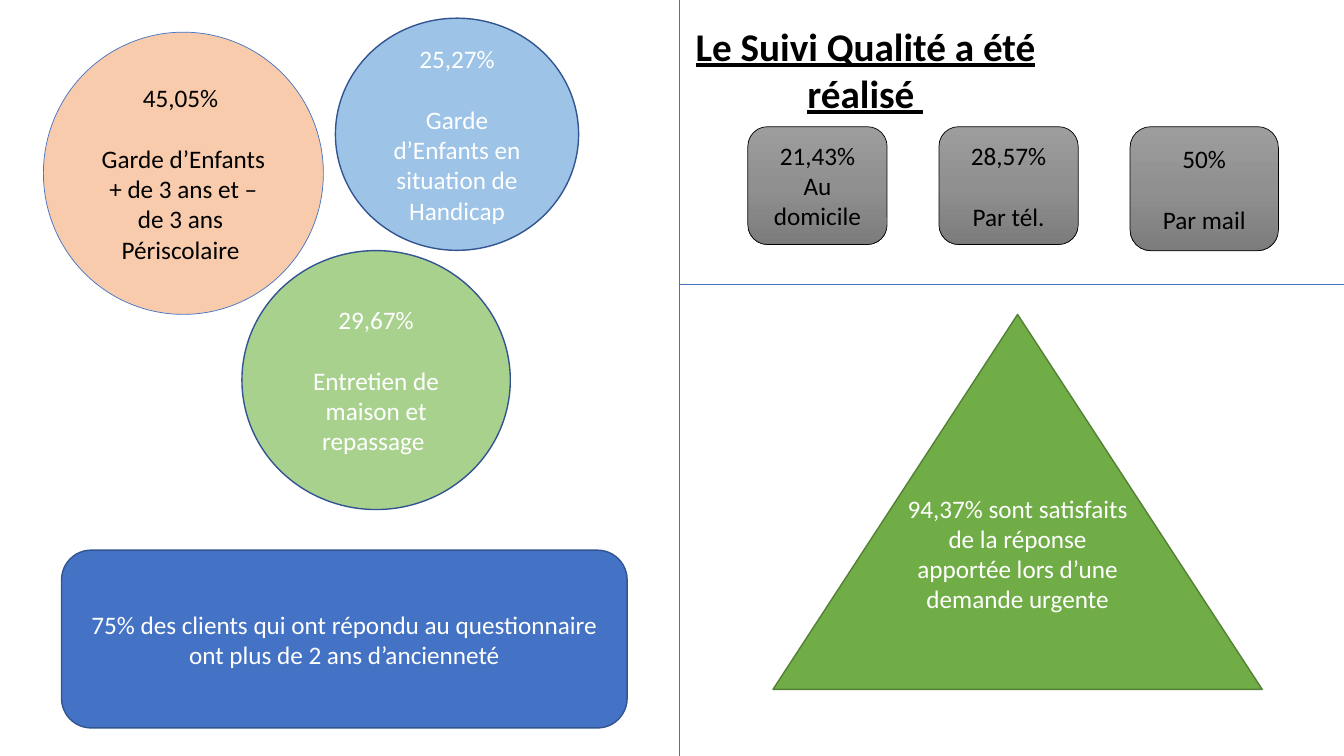
from copy import deepcopy
from dataclasses import dataclass

from lxml import etree
from pptx import Presentation
from pptx.dml.color import RGBColor
from pptx.enum import shapes, text
from pptx.oxml import ns
from pptx.util import Pt


@dataclass(frozen=True)
class Theme:
    font: str = "Calibri"
    body: int = 18
    title: int = 28
    line_gap: float = 22
    thin: float = 0.5
    medium: float = 1
    black: str = "000000"
    white: str = "FFFFFF"
    blue: str = "4472C4"
    navy: str = "325491"
    peach: str = "F8CBAD"
    sky: str = "9DC3E6"
    mint: str = "A9D18E"
    green: str = "70AD47"
    dark_green: str = "538035"
    greys: tuple = ((0, "9D9D9D"), (0.5, "909090"), (1, "7C7C7C"))


T = Theme()
SHAPE = shapes.MSO_SHAPE
WIDTH, HEIGHT = 960, 540
DIVIDER_X, DIVIDER_Y = 485.4, 203.1


def rgb(color):
    return RGBColor.from_string(color)


def write(tf, lines, color, size=T.body, heading=False):
    """Centre the lines; a None entry leaves a one-line gap by spacing."""
    tf.word_wrap = True
    p = None
    for line in lines:
        if line is None:
            p.space_after = Pt(T.line_gap)
            continue
        p = tf.add_paragraph() if p is not None else tf.paragraphs[0]
        p.text = line
        p.alignment = text.PP_ALIGN.CENTER
        for r in p.runs:
            r.font.name = T.font
            r.font.size = Pt(size)
            r.font.bold = r.font.underline = heading
            r.font.color.rgb = rgb(color)


def fill_gradient(s, stops):
    """Fill from top to bottom with any number of stops."""
    s.fill.gradient()
    s.fill.gradient_angle = 270
    gs_list = s._element.spPr.find(".//" + ns.qn("a:gsLst"))
    for _ in stops[2:]:
        gs_list.append(deepcopy(gs_list[0]))
    for stop, (position, color) in zip(s.fill.gradient_stops, stops):
        stop.position = position
        stop.color.rgb = rgb(color)


def add_figure(sp, kind, box, fill, line, lines, color=T.white, weight=T.medium):
    s = sp.add_shape(kind, *map(Pt, box))
    s.shadow.inherit = False
    if isinstance(fill, str):
        s.fill.solid()
        s.fill.fore_color.rgb = rgb(fill)
    else:
        fill_gradient(s, fill)
    s.line.color.rgb = rgb(line)
    s.line.width = Pt(weight)
    s.text_frame.vertical_anchor = text.MSO_ANCHOR.MIDDLE
    write(s.text_frame, lines, color)
    return s


def add_divider(sp, x1, y1, x2, y2):
    c = sp.add_connector(shapes.MSO_CONNECTOR.STRAIGHT, *map(Pt, (x1, y1, x2, y2)))
    c.line.color.rgb = rgb(T.blue)
    c.line.width = Pt(T.thin)
    etree.SubElement(c._element.spPr, ns.qn("a:effectLst"))


def add_title(sp, box, title):
    tf = sp.add_textbox(*map(Pt, box)).text_frame
    write(tf, [title], T.black, T.title, heading=True)


def add_services(sp):
    add_figure(sp, SHAPE.OVAL, (31, 23, 200, 201.6), T.peach, T.blue,
               ["45,05% ", None, "Garde d’Enfants + de 3 ans et – de 3 ans ",
                "Périscolaire "], T.black, T.thin)
    add_figure(sp, SHAPE.OVAL, (239.6, 13, 173.7, 165.8), T.sky, T.navy,
               ["25,27%", None, "Garde d’Enfants en situation de Handicap"])
    add_figure(sp, SHAPE.OVAL, (172.8, 179, 191.7, 185), T.mint, T.navy,
               ["29,67%", None, "Entretien de maison et repassage "])


def add_channels(sp):
    channels = [
        (99.5, 84.2, ["21,43% Au domicile"]),
        (99.5, 84.2, ["28,57%", None, "Par tél."]),
        (106, 88.6, ["50%", None, "Par mail"]),
    ]
    left, top, pitch = 534.2, 90.5, 136.5
    for i, (width, height, lines) in enumerate(channels):
        add_figure(sp, SHAPE.ROUNDED_RECTANGLE, (left + i * pitch, top, width, height),
                   T.greys, T.black, lines, T.black, T.thin)


def main():
    prs = Presentation()
    prs.slide_width, prs.slide_height = Pt(WIDTH), Pt(HEIGHT)
    sp = prs.slides.add_slide(prs.slide_layouts[6]).shapes

    add_services(sp)
    add_divider(sp, DIVIDER_X, 0, DIVIDER_X, HEIGHT)
    add_channels(sp)
    add_divider(sp, DIVIDER_X, DIVIDER_Y, WIDTH, DIVIDER_Y)
    triangle = add_figure(
        sp, SHAPE.ISOSCELES_TRIANGLE, (552.2, 224.6, 349.4, 267.8), T.green, T.dark_green,
        ["94,37% sont satisfaits de la réponse apportée lors d’une demande urgente"])
    triangle.text_frame.margin_bottom = Pt(64)
    add_figure(sp, SHAPE.ROUNDED_RECTANGLE, (44, 393, 404, 127), T.blue, T.navy,
               ["75% des clients qui ont répondu au questionnaire "
                "ont plus de 2 ans d’ancienneté"])
    add_title(sp, (456.5, 12.2, 323.3, 75), "Le Suivi Qualité a été réalisé ")

    prs.save("out.pptx")


if __name__ == "__main__":
    main()
